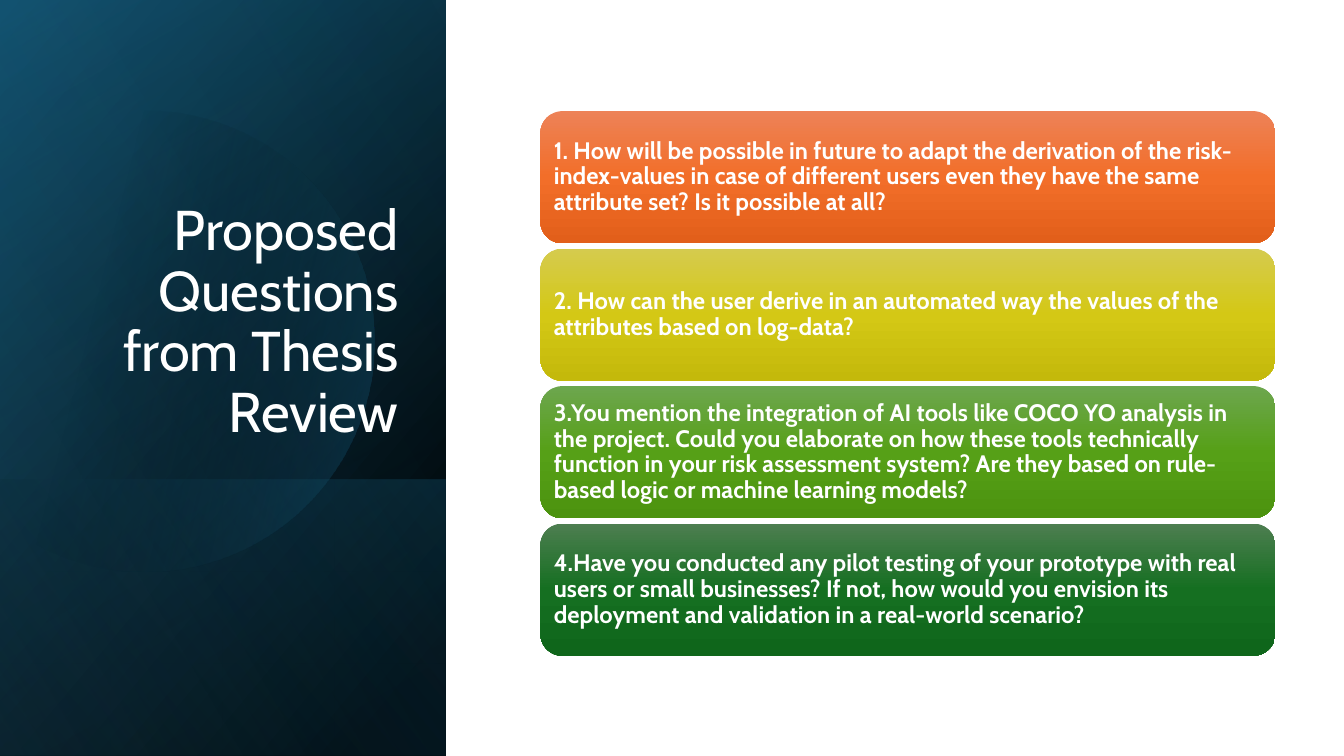
from math import acos, cos, sin

from lxml import etree
from pptx import Presentation
from pptx.dml.color import RGBColor
from pptx.enum.shapes import MSO_SHAPE
from pptx.enum.text import MSO_ANCHOR, PP_ALIGN
from pptx.oxml.ns import qn
from pptx.util import Pt

RECTANGLE = MSO_SHAPE.RECTANGLE
ROUNDED = MSO_SHAPE.ROUNDED_RECTANGLE
MIDDLE = MSO_ANCHOR.MIDDLE
BOTTOM = MSO_ANCHOR.BOTTOM
LEFT = PP_ALIGN.LEFT
RIGHT = PP_ALIGN.RIGHT

PANEL_WIDTH = 318.5
CARD_TOP, CARD_PITCH = 79.4, 98.2

PANEL_LAYERS = [
    (0, [(8, "000000", 100), (100, "104862", 100)], 50),
    (0, [(0, "000000", 0), (99, "156082", 46)], 30),
    (342.5, [(2, "156082", 29), (100, "000000", 30)], 130),
]
DISC_STOPS = [(29, "000000", 0), (100, "156082", 43)]
GLOW_LAYER = (0, [(0, "000000", 0), (99, "46B1E1", 11)], 120)

QUESTIONS = [
    ("1. How will be possible in future to adapt the derivation of the "
     "risk-index-values in case of different users even they have the same "
     "attribute set? Is it possible at all?", ("ED8257", "F26E29", "E25F1A")),
    ("2. How can the user derive in an automated way the values of the "
     "attributes based on log-data?", ("D5CB4E", "D4C815", "C4B90B")),
    ("3.You mention the integration of AI tools like COCO YO analysis in the "
     "project. Could you elaborate on how these tools technically function in "
     "your risk assessment system? Are they based on rule-based logic or "
     "machine learning models?", ("6DA64E", "56A017", "4C930F")),
    ("4.Have you conducted any pilot testing of your prototype with real users "
     "or small businesses? If not, how would you envision its deployment and "
     "validation in a real-world scenario?", ("4D7E50", "156F21", "0F661B")),
]


def color(value):
    return RGBColor.from_string(value)


class SlideBuilder:
    """Draws styled elements on the current slide, with lengths in points."""

    font_name = "Cabin"
    text_color = "FFFFFF"

    def __init__(self, slide, height):
        self.slide = slide
        self.height = height

    def gradient(self, shape, stops, angle):
        shape.shadow.inherit = False
        shape.line.fill.background()
        shape.fill.gradient()
        fill = shape._element.spPr.find(qn("a:gradFill"))
        for child in list(fill):
            fill.remove(child)
        stop_list = etree.SubElement(fill, qn("a:gsLst"))
        for position, value, opacity in stops:
            stop = etree.SubElement(stop_list, qn("a:gs"), pos=str(position * 1000))
            tint = etree.SubElement(stop, qn("a:srgbClr"), val=str(color(value)))
            if opacity < 100:
                etree.SubElement(tint, qn("a:alpha"), val=str(opacity * 1000))
        etree.SubElement(fill, qn("a:lin"), ang=str(angle * 60000), scaled="0")

    def panel_layer(self, top, stops, angle):
        length = self.height - top
        center_x, center_y = PANEL_WIDTH / 2, top + length / 2
        shape = self.slide.shapes.add_shape(
            RECTANGLE, Pt(center_x - length / 2), Pt(center_y - PANEL_WIDTH / 2),
            Pt(length), Pt(PANEL_WIDTH))
        shape.rotation = 90
        shape._element.spPr.find(qn("a:xfrm")).set("flipH", "1")
        self.gradient(shape, stops, angle)

    def clipped_disc(self, center_x, center_y, radius, stops, angle):
        limit = acos(-center_x / radius)
        steps = 120
        turns = [limit * (2 * step / steps - 1) for step in range(steps + 1)]
        points = [(Pt(center_x + radius * cos(turn)), Pt(center_y + radius * sin(turn)))
                  for turn in turns]
        builder = self.slide.shapes.build_freeform(*points[0])
        builder.add_line_segments(points[1:], close=True)
        self.gradient(builder.convert_to_shape(), stops, angle)

    def fill_text(self, shape, text, size, alignment, anchor, bold=False):
        frame = shape.text_frame
        frame.word_wrap = True
        frame.vertical_anchor = anchor
        paragraph = frame.paragraphs[0]
        paragraph.text = text
        paragraph.alignment = alignment
        paragraph.line_spacing = 0.9
        font = paragraph.font
        font.name, font.size, font.bold = self.font_name, Pt(size), bold
        font.color.rgb = color(self.text_color)

    def title(self, text, left, top, width, height):
        box = self.slide.shapes.add_textbox(Pt(left), Pt(top), Pt(width), Pt(height))
        self.fill_text(box, text, 40, RIGHT, BOTTOM)

    def card(self, text, top, colors):
        shape = self.slide.shapes.add_shape(ROUNDED, Pt(386), Pt(top), Pt(525), Pt(94.4))
        stops = [(50 * index, value, 100) for index, value in enumerate(colors)]
        self.gradient(shape, stops, 90)
        frame = shape.text_frame
        frame.margin_left = frame.margin_right = Pt(5)
        frame.margin_top = frame.margin_bottom = Pt(5)
        self.fill_text(shape, text, 17, LEFT, MIDDLE, bold=True)


def main():
    presentation = Presentation()
    presentation.slide_width, presentation.slide_height = Pt(960), Pt(540)
    slide = presentation.slides.add_slide(presentation.slide_layouts[6])
    builder = SlideBuilder(slide, 540)
    for layer in PANEL_LAYERS:
        builder.panel_layer(*layer)
    builder.clipped_disc(103.3, 243.7, 164.5, DISC_STOPS, 14)
    builder.panel_layer(*GLOW_LAYER)
    builder.title("Proposed Questions from Thesis Review", 46, 132.5, 245.5, 188.5)
    for index, (question, colors) in enumerate(QUESTIONS):
        builder.card(question, CARD_TOP + index * CARD_PITCH, colors)
    presentation.save("out.pptx")


if __name__ == "__main__":
    main()
